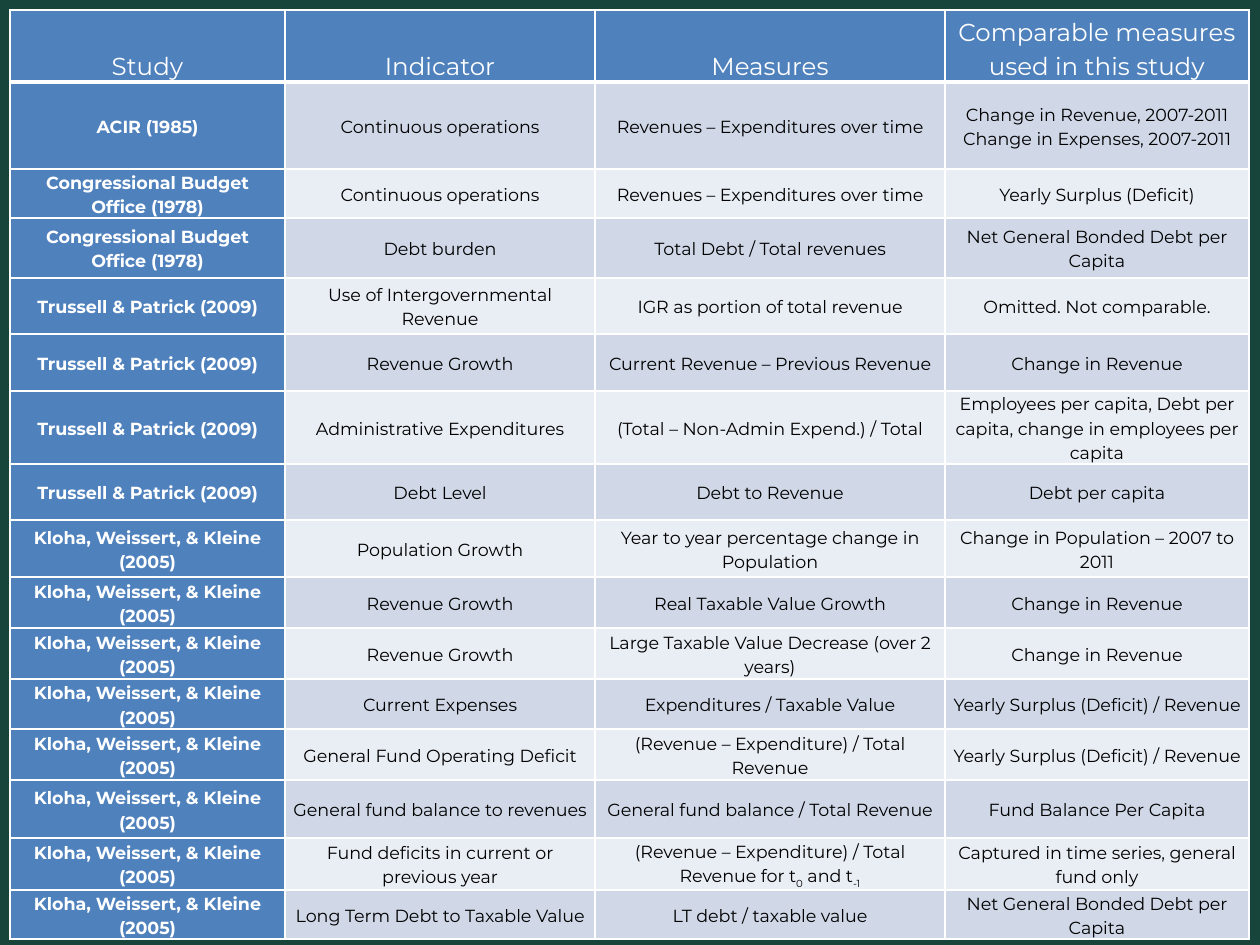
"""Build a slide with a table comparing fiscal-stress indicators across studies."""
from dataclasses import dataclass

from lxml import etree
from pptx import Presentation
from pptx import util as u
from pptx.dml import color
from pptx.enum import text
from pptx.oxml import ns

PX = u.Inches(1) / 126


@dataclass(frozen=True)
class Theme:
    font: str = "Montserrat"
    backdrop: str = "18453B"
    accent: str = "4F81BD"
    bands: tuple[str, str] = ("D0D8E8", "E9EDF4")
    light: str = "FFFFFF"
    dark: str = "000000"
    header_size: int = 14
    body_size: int = 10
    spacing: float = 1.15
    rule: int = 1
    header_rule: int = 3


@dataclass(frozen=True)
class Finding:
    height: int
    indicator: str
    measure: str
    comparable: str


@dataclass(frozen=True)
class Study:
    name: str
    findings: tuple[Finding, ...]


@dataclass(frozen=True)
class CellStyle:
    fill: str
    ink: str
    size: int
    bold: bool
    anchor: text.MSO_ANCHOR
    top: int
    bottom: int


THEME = Theme()
LEFT, TOP = 10, 10
COLUMN_WIDTHS = (275, 310, 350, 304)
HEADER_HEIGHT = 72
HEADINGS = ("Study", "Indicator", "Measures", "Comparable measures used in this study")
STUDIES = (
    Study("ACIR (1985)", (
        Finding(87, "Continuous operations", "Revenues – Expenditures over time",
                "Change in Revenue, 2007-2011\nChange in Expenses, 2007-2011"),
    )),
    Study("Congressional Budget Office (1978)", (
        Finding(49, "Continuous operations", "Revenues – Expenditures over time",
                "Yearly Surplus (Deficit)"),
        Finding(60, "Debt burden", "Total Debt / Total revenues",
                "Net General Bonded Debt per Capita"),
    )),
    Study("Trussell & Patrick (2009)", (
        Finding(56, "Use of Intergovernmental Revenue", "IGR as portion of total revenue",
                "Omitted. Not comparable."),
        Finding(57, "Revenue Growth", "Current Revenue – Previous Revenue", "Change in Revenue"),
        Finding(73, "Administrative Expenditures", "(Total – Non-Admin Expend.) / Total",
                "Employees per capita, Debt per capita, change in employees per capita"),
        Finding(56, "Debt Level", "Debt to Revenue", "Debt per capita"),
    )),
    Study("Kloha, Weissert, & Kleine (2005)", (
        Finding(57, "Population Growth", "Year to year percentage change in Population",
                "Change in Population – 2007 to 2011"),
        Finding(51, "Revenue Growth", "Real Taxable Value Growth", "Change in Revenue"),
        Finding(51, "Revenue Growth", "Large Taxable Value Decrease (over 2 years)",
                "Change in Revenue"),
        Finding(50, "Current Expenses", "Expenditures / Taxable Value",
                "Yearly Surplus (Deficit) / Revenue"),
        Finding(51, "General Fund Operating Deficit", "(Revenue – Expenditure) / Total Revenue",
                "Yearly Surplus (Deficit) / Revenue"),
        Finding(58, "General fund balance to revenues", "General fund balance / Total Revenue",
                "Fund Balance Per Capita"),
        Finding(52, "Fund deficits in current or previous year",
                "(Revenue – Expenditure) / Total Revenue for t~0~ and t~-1~",
                "Captured in time series, general fund only"),
        Finding(49, "Long Term Debt to Taxable Value", "LT debt / taxable value",
                "Net General Bonded Debt per Capita"),
    )),
)


def px(length: float) -> int:
    """Convert pixels to EMU."""
    return round(length * PX)


def apply(target: object, values: dict) -> None:
    """Set each named attribute on the target."""
    for name, value in values.items():
        setattr(target, name, value)


def draw_borders(cell, style: CellStyle) -> None:
    """Rule all four sides of a cell in the light colour."""
    properties = cell._tc.get_or_add_tcPr()
    sides = {"L": THEME.rule, "R": THEME.rule, "T": style.top, "B": style.bottom}
    for side, weight in sides.items():
        rule = etree.SubElement(properties, ns.qn(f"a:ln{side}"), w=str(u.Pt(weight)))
        paint = etree.SubElement(rule, ns.qn("a:solidFill"))
        etree.SubElement(paint, ns.qn("a:srgbClr"), val=THEME.light)


def write_paragraph(paragraph, wording: str, style: CellStyle) -> None:
    """Write centred wording, lowering the parts between tildes."""
    apply(paragraph, {"alignment": text.PP_ALIGN.CENTER, "line_spacing": THEME.spacing})
    for position, part in enumerate(wording.split("~")):
        if not part:
            continue
        run = paragraph.add_run()
        run.text = part
        apply(run.font, {"name": THEME.font, "size": u.Pt(style.size), "bold": style.bold})
        run.font.color.rgb = color.RGBColor.from_string(style.ink)
        if position % 2:
            run._r.get_or_add_rPr().set("baseline", "-25000")


def fill_cell(cell, wording: str, style: CellStyle) -> None:
    """Format one cell and write its paragraphs."""
    draw_borders(cell, style)
    cell.fill.solid()
    cell.fill.fore_color.rgb = color.RGBColor.from_string(style.fill)
    apply(cell, {
        "vertical_anchor": style.anchor,
        "margin_left": u.Inches(0.05), "margin_right": u.Inches(0.05),
        "margin_top": 0, "margin_bottom": 0,
    })
    for index, line in enumerate(wording.split("\n")):
        frame = cell.text_frame
        write_paragraph(frame.add_paragraph() if index else frame.paragraphs[0], line, style)


def cell_style(row: int, column: int) -> CellStyle:
    """Choose the look of a cell from its place in the table."""
    if row == 0:
        return CellStyle(THEME.accent, THEME.light, THEME.header_size, False,
                         text.MSO_ANCHOR.BOTTOM, THEME.rule, THEME.header_rule)
    is_study = column == 0
    return CellStyle(
        THEME.accent if is_study else THEME.bands[(row - 1) % 2],
        THEME.light if is_study else THEME.dark,
        THEME.body_size, is_study, text.MSO_ANCHOR.MIDDLE,
        THEME.header_rule if row == 1 else THEME.rule, THEME.rule,
    )


def draw_comparison(slide) -> None:
    """Draw the table of studies, indicators and measures."""
    entries = [(HEADER_HEIGHT, HEADINGS)] + [
        (finding.height, (study.name, finding.indicator, finding.measure, finding.comparable))
        for study in STUDIES for finding in study.findings
    ]
    comparison = slide.shapes.add_table(
        len(entries), len(COLUMN_WIDTHS), px(LEFT), px(TOP),
        px(sum(COLUMN_WIDTHS)), px(sum(height for height, _ in entries)),
    ).table
    apply(comparison, {"first_row": True, "first_col": True, "horz_banding": True})
    for column, width in zip(comparison.columns, COLUMN_WIDTHS):
        column.width = px(width)
    for row, (height, wordings) in enumerate(entries):
        comparison.rows[row].height = px(height)
        for column, wording in enumerate(wordings):
            fill_cell(comparison.cell(row, column), wording, cell_style(row, column))


def main() -> None:
    """Create the presentation and save it."""
    deck = Presentation()
    apply(deck, {"slide_width": px(1260), "slide_height": px(945)})
    slide = deck.slides.add_slide(deck.slide_layouts[6])
    slide.background.fill.solid()
    slide.background.fill.fore_color.rgb = color.RGBColor.from_string(THEME.backdrop)
    draw_comparison(slide)
    deck.save("out.pptx")


if __name__ == "__main__":
    main()
